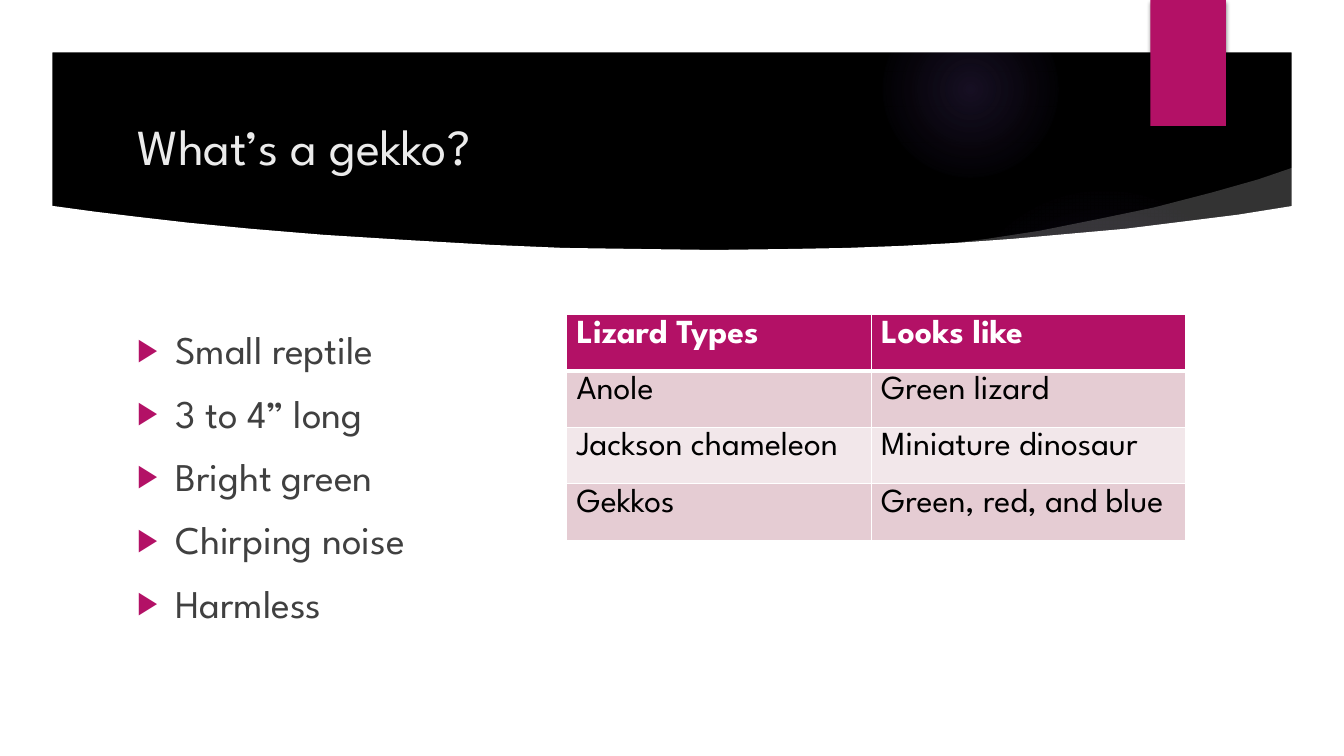
import pptx
import pptx.dml.color
import pptx.enum.shapes
import pptx.enum.text
import pptx.oxml
import pptx.oxml.ns
import pptx.util

Inches = pptx.util.Inches
Pt = pptx.util.Pt
RGBColor = pptx.dml.color.RGBColor
SHAPE = pptx.enum.shapes.MSO_SHAPE
ANCHOR = pptx.enum.text.MSO_ANCHOR

FONT = "League Spartan"
BLACK = RGBColor(0x00, 0x00, 0x00)
WHITE = RGBColor(0xFF, 0xFF, 0xFF)
MAGENTA = RGBColor(0xB3, 0x11, 0x66)
VIOLET = RGBColor(0x9B, 0x6B, 0xF2)
TITLE_GRAY = RGBColor(0xEB, 0xEB, 0xEB)
TEXT_GRAY = RGBColor(0x40, 0x40, 0x40)
ROSE = RGBColor(0xE5, 0xCC, 0xD3)
PALE_ROSE = RGBColor(0xF2, 0xE7, 0xEA)

MARGIN = 0.52
GLOWS = [
    ((9.41, 1.83, 3.08, 3.08), [(0, 7), (36, 6), (69, 0)]),
    ((8.75, 0.01, 1.75, 1.75), [(0, 14), (36, 7), (73, 0)]),
]
SHEEN = [(9.3, 2.43), (9.79, 2.37), (10.31, 2.29), (10.86, 2.18), (11.44, 2.06),
         (12.02, 1.91), (12.48, 1.78), (12.83, 1.66), (12.89, 2.14), (12, 2.28),
         (10.5, 2.45), (9.34, 2.5)]
PANEL = [(0.5, 7), (12.84, 7), (12.84, 2.04), (12.28, 2.13), (11.72, 2.2),
         (11.16, 2.27), (10.6, 2.32), (10.04, 2.37), (9.49, 2.41), (8.94, 2.44),
         (8.4, 2.46), (7.86, 2.47), (7.08, 2.48), (6.32, 2.47), (5.59, 2.46),
         (4.88, 2.43), (4.01, 2.38), (3.21, 2.33), (2.49, 2.27), (1.87, 2.21),
         (1.35, 2.15), (0.94, 2.1), (0.5, 2.04)]
FACTS = ["Small reptile", "3 to 4” long", "Bright green", "Chirping noise", "Harmless"]
LIZARDS = [
    ("Lizard Types", "Looks like"),
    ("Anole", "Green lizard"),
    ("Jackson chameleon", "Miniature dinosaur"),
    ("Gekkos", "Green, red, and blue"),
]


def make_xml(text):
    """Return an element from markup in the drawing namespace."""
    head, tail = text.split(">", 1)
    slash = "/" if head.endswith("/") else ""
    return pptx.oxml.parse_xml(
        f"{head.rstrip('/')} {pptx.oxml.ns.nsdecls('a')}{slash}>{tail}")


def style(sp, color):
    """Give a shape a flat fill with no line or shadow."""
    sp.shadow.inherit = False
    sp.fill.solid()
    sp.fill.fore_color.rgb = color
    sp.line.fill.background()
    return sp


def add_preset(s, kind, box, color):
    """Add a flat preset shape in a box given in inches."""
    return style(s.shapes.add_shape(kind, *map(Inches, box)), color)


def add_outline(s, points, color):
    """Add a flat closed polygon through points given in inches."""
    pts = [(Inches(x), Inches(y)) for x, y in points]
    builder = s.shapes.build_freeform(*pts[0], scale=1.0)
    builder.add_line_segments(pts[1:], close=True)
    return style(builder.convert_to_shape(), color)


def add_glow(s, box, stops):
    """Add a round violet glow that fades outwards."""
    sp = add_preset(s, SHAPE.OVAL, box, VIOLET)
    gs = "".join(
        f'<a:gs pos="{pos * 1000}"><a:srgbClr val="{VIOLET}">'
        f'<a:alpha val="{alpha * 1000}"/></a:srgbClr></a:gs>' for pos, alpha in stops)
    solid = sp.element.spPr.find(pptx.oxml.ns.qn("a:solidFill"))
    sp.element.spPr.replace(solid, make_xml(
        f'<a:gradFill><a:gsLst>{gs}</a:gsLst><a:path path="circle">'
        '<a:fillToRect l="50000" t="50000" r="50000" b="50000"/></a:path></a:gradFill>'))


def add_backdrop(s, width, height):
    """Draw the dark curved band, its white surround and the ribbon."""
    s.background.fill.solid()
    s.background.fill.fore_color.rgb = BLACK
    for box, stops in GLOWS:
        add_glow(s, box, stops)
    frame = add_preset(s, SHAPE.FRAME, (0, 0, width, height), WHITE)
    frame.adjustments[0] = MARGIN / height
    sheen = add_outline(s, SHEEN, WHITE)
    color = sheen.element.spPr.find(".//" + pptx.oxml.ns.qn("a:srgbClr"))
    color.append(make_xml('<a:alpha val="20000"/>'))
    ribbon = add_preset(s, SHAPE.RECTANGLE, (11.41, 0, 0.75, 1.25), MAGENTA)
    effects = ribbon.element.spPr.find(pptx.oxml.ns.qn("a:effectLst"))
    effects.append(make_xml(
        f'<a:outerShdw blurRad="{Pt(3)}" dist="{Pt(2)}" dir="5400000" rotWithShape="0">'
        f'<a:srgbClr val="{BLACK}"><a:alpha val="45000"/></a:srgbClr></a:outerShdw>'))
    add_outline(s, PANEL, WHITE)


def fill_placeholder(s, sp, box, lines, size, color):
    """Move a placeholder to the front of the slide and set its text."""
    s.shapes.element.append(sp.element)
    sp.left, sp.top, sp.width, sp.height = map(Inches, box)
    tf = sp.text_frame
    tf.text = "\n".join(lines)
    tf.word_wrap = True
    tf.auto_size = pptx.enum.text.MSO_AUTO_SIZE.NONE
    tf.vertical_anchor = ANCHOR.MIDDLE
    for p in tf.paragraphs:
        p.alignment = pptx.enum.text.PP_ALIGN.LEFT
        p.font.name = FONT
        p.font.size = Pt(size)
        p.font.color.rgb = color
    return tf


def add_facts(s, box):
    """Fill the body placeholder with the bulleted facts."""
    tf = fill_placeholder(s, s.placeholders[1], box, FACTS, 28, TEXT_GRAY)
    for p in tf.paragraphs:
        p.space_before = Pt(5.6)
        p.space_after = Pt(6)
        pPr = p._p.get_or_add_pPr()
        pPr.set("marL", str(Inches(0.38)))
        pPr.set("indent", str(Inches(-0.38)))
        bullet = [f'<a:buClr><a:srgbClr val="{MAGENTA}"/></a:buClr>',
                  '<a:buSzPct val="80000"/>', '<a:buChar char="▶"/>']
        at = len(pPr) - 1
        for i, xml in enumerate(bullet):
            pPr.insert(at + i, make_xml(xml))


def format_cell(cell, text, row):
    """Write one table cell with its fill and white borders."""
    header = row == 0
    tcPr = cell._tc.get_or_add_tcPr()
    for side in "LRTB":
        thick = (header and side == "B") or (row == 1 and side == "T")
        tcPr.append(make_xml(
            f'<a:ln{side} w="{Pt(3 if thick else 1)}"><a:solidFill>'
            f'<a:srgbClr val="{WHITE}"/></a:solidFill></a:ln{side}>'))
    cell.fill.solid()
    cell.fill.fore_color.rgb = MAGENTA if header else (PALE_ROSE, ROSE)[row % 2]
    cell.text = text
    p = cell.text_frame.paragraphs[0]
    p.font.name = FONT
    p.font.size = Pt(24)
    p.font.bold = header
    p.font.color.rgb = WHITE if header else BLACK


def add_lizard_table(s, left, top, widths, row_height):
    """Add the table of lizard types."""
    table = s.shapes.add_table(
        len(LIZARDS), len(widths), Inches(left), Inches(top),
        Inches(sum(widths)), Inches(row_height * len(LIZARDS))).table
    for column, width in zip(table.columns, widths):
        column.width = Inches(width)
    for i, row in enumerate(LIZARDS):
        for j, text in enumerate(row):
            format_cell(table.cell(i, j), text, i)


def main():
    """Build and save the slide."""
    prs = pptx.Presentation()
    prs.slide_width, prs.slide_height = Inches(13.33), Inches(7.5)
    s = prs.slides.add_slide(prs.slide_layouts[1])
    add_backdrop(s, 13.33, 7.5)
    fill_placeholder(s, s.shapes.title, (1.26, 1.06, 9.65, 0.77),
                     ["What’s a gekko?"], 36, TITLE_GRAY)
    add_facts(s, (1.26, 2.85, 9.65, 3.74))
    add_lizard_table(s, 5.62, 3.12, (3.02, 3.12), 0.56)
    prs.save("out.pptx")


if __name__ == "__main__":
    main()
